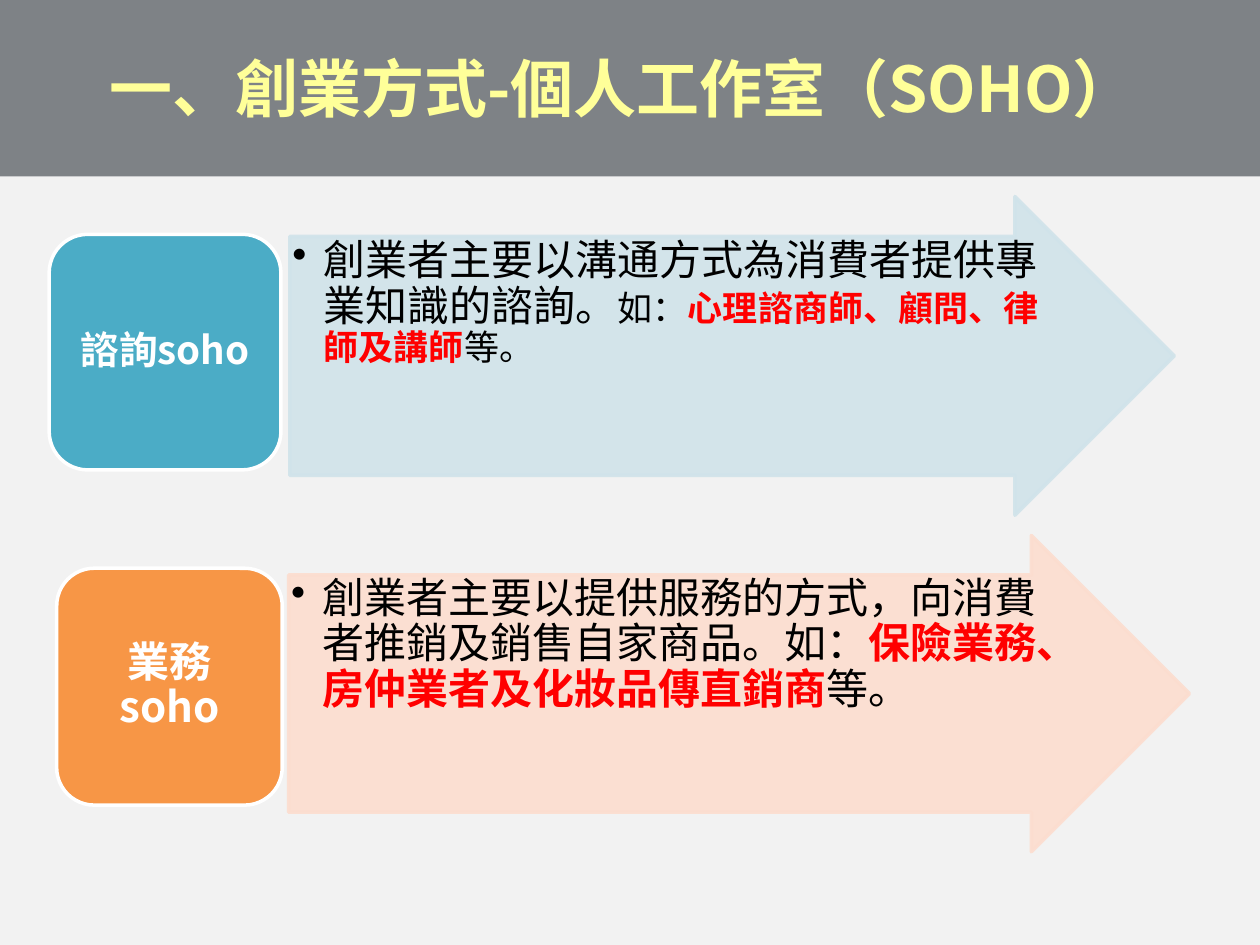
"""Build the slide on personal studio (SOHO) ways of starting a business."""
import dataclasses
import typing

import lxml.etree
import pptx
import pptx.dml.color
import pptx.enum.shapes
import pptx.enum.text
import pptx.oxml.ns
import pptx.util

Inches = pptx.util.Inches
Pt = pptx.util.Pt
SHAPE = pptx.enum.shapes.MSO_SHAPE
ANCHOR = pptx.enum.text.MSO_ANCHOR
ALIGN = pptx.enum.text.PP_ALIGN
qn = pptx.oxml.ns.qn
Box = typing.Tuple[float, float, float, float]


@dataclasses.dataclass(frozen=True)
class Theme:
    font: str = "Noto Sans CJK SC"
    background: str = "F2F2F2"
    band: str = "0C141C"
    title: str = "FFFF99"
    text: str = "000000"
    accent: str = "FF0000"
    light: str = "FFFFFF"
    title_size: int = 36
    body_size: int = 24
    small_size: int = 20
    label_size: int = 22
    outline: int = 2


THEME = Theme()


class Run(typing.NamedTuple):
    text: str
    size: int = THEME.body_size
    color: str = THEME.text
    bold: bool = False


class Row(typing.NamedTuple):
    arrow: Box
    arrow_color: str
    body: Box
    runs: typing.List[Run]
    tile: Box
    tile_color: str
    label: Run


ROWS = [
    Row((2.3, 1.56, 7.02, 2.53), "D0E3EA", (2.3, 1.88, 6.07, 1.9),
        [Run("創業者主要以溝通方式為消費者提供專業知識的諮詢。"),
         Run("如：", THEME.small_size),
         Run("心理諮商師、顧問、律師及講師", THEME.small_size, THEME.accent, True),
         Run("等。", THEME.small_size)],
        (0.39, 1.86, 1.84, 1.87), "4BACC6",
        Run("諮詢soho", THEME.label_size, THEME.light, True)),
    Row((2.29, 4.25, 7.15, 2.51), "FCDDCF", (2.29, 4.56, 6.2, 1.88),
        [Run("創業者主要以提供服務的方式，向消費者推銷及銷售自家商品。如："),
         Run("保險業務、房仲業者及化妝品傳直銷商", color=THEME.accent, bold=True),
         Run("等。")],
        (0.45, 4.51, 1.79, 1.88), "F79646",
        Run("業務soho", THEME.body_size, THEME.light, True)),
]


def rgb(color: str) -> pptx.dml.color.RGBColor:
    return pptx.dml.color.RGBColor.from_string(color)


def apply(target: typing.Any, values: typing.Dict[str, typing.Any]) -> None:
    for name, value in values.items():
        setattr(target, name, value)


def add_block(s, kind, box: Box, color: str, line: str = "", opacity: int = 100):
    sp = s.shapes.add_shape(kind, *map(Inches, box))
    sp.shadow.inherit = False
    sp.fill.solid()
    sp.fill.fore_color.rgb = rgb(color)
    if line:
        sp.line.color.rgb = rgb(line)
        sp.line.width = Pt(THEME.outline)
    else:
        sp.line.fill.background()
    if opacity < 100:
        for node in sp.element.spPr.iter(qn("a:srgbClr")):
            lxml.etree.SubElement(node, qn("a:alpha"), val=str(opacity * 1000))
    return sp


def add_text(s, box: Box, runs: typing.List[Run], anchor=ANCHOR.TOP,
             align=ALIGN.LEFT, inset: typing.Tuple[float, float] = (0.09, 0.05)):
    tf = s.shapes.add_textbox(*map(Inches, box)).text_frame
    side, top = map(Inches, inset)
    apply(tf, {"word_wrap": True, "vertical_anchor": anchor, "margin_left": side,
               "margin_right": side, "margin_top": top, "margin_bottom": top})
    p = tf.paragraphs[0]
    apply(p, {"alignment": align, "line_spacing": 0.9})
    for run in runs:
        r = p.add_run()
        r.text = run.text
        apply(r.font, {"name": THEME.font, "size": Pt(run.size), "bold": run.bold})
        r.font.color.rgb = rgb(run.color)
        lxml.etree.SubElement(r.font._element, qn("a:ea"), typeface=THEME.font)
    return p


def add_bullet(p, indent: float) -> None:
    ppr = p._p.get_or_add_pPr()
    ppr.set("marL", str(Inches(indent)))
    ppr.set("indent", str(-Inches(indent)))
    lxml.etree.SubElement(ppr, qn("a:buChar"), char="•")


def add_row(s, row: Row) -> None:
    sp = add_block(s, SHAPE.RIGHT_ARROW, row.arrow, row.arrow_color, row.arrow_color, 90)
    sp.adjustments[0] = 0.75
    add_bullet(add_text(s, row.body, row.runs, inset=(0.02, 0.02)), 0.25)
    add_block(s, SHAPE.ROUNDED_RECTANGLE, row.tile, row.tile_color, THEME.light)
    x, y, w, h = row.tile
    pad = 0.09
    add_text(s, (x + pad, y + pad, w - 2 * pad, h - 2 * pad), [row.label],
             ANCHOR.MIDDLE, ALIGN.CENTER)


def main() -> None:
    prs = pptx.Presentation()
    apply(prs, {"slide_width": Inches(10), "slide_height": Inches(7.5)})
    s = prs.slides.add_slide(prs.slide_layouts[6])
    s.background.fill.solid()
    s.background.fill.fore_color.rgb = rgb(THEME.background)
    add_block(s, SHAPE.RECTANGLE, (0, 0, 10, 1.4), THEME.band, opacity=50)
    title = Run("一、創業方式-個人工作室（SOHO）", THEME.title_size, THEME.title, True)
    add_text(s, (0.51, 0.17, 8.86, 0.87), [title], ANCHOR.BOTTOM, ALIGN.CENTER, (0.08, 0.04))
    for row in ROWS:
        add_row(s, row)
    prs.save("out.pptx")


if __name__ == "__main__":
    main()
